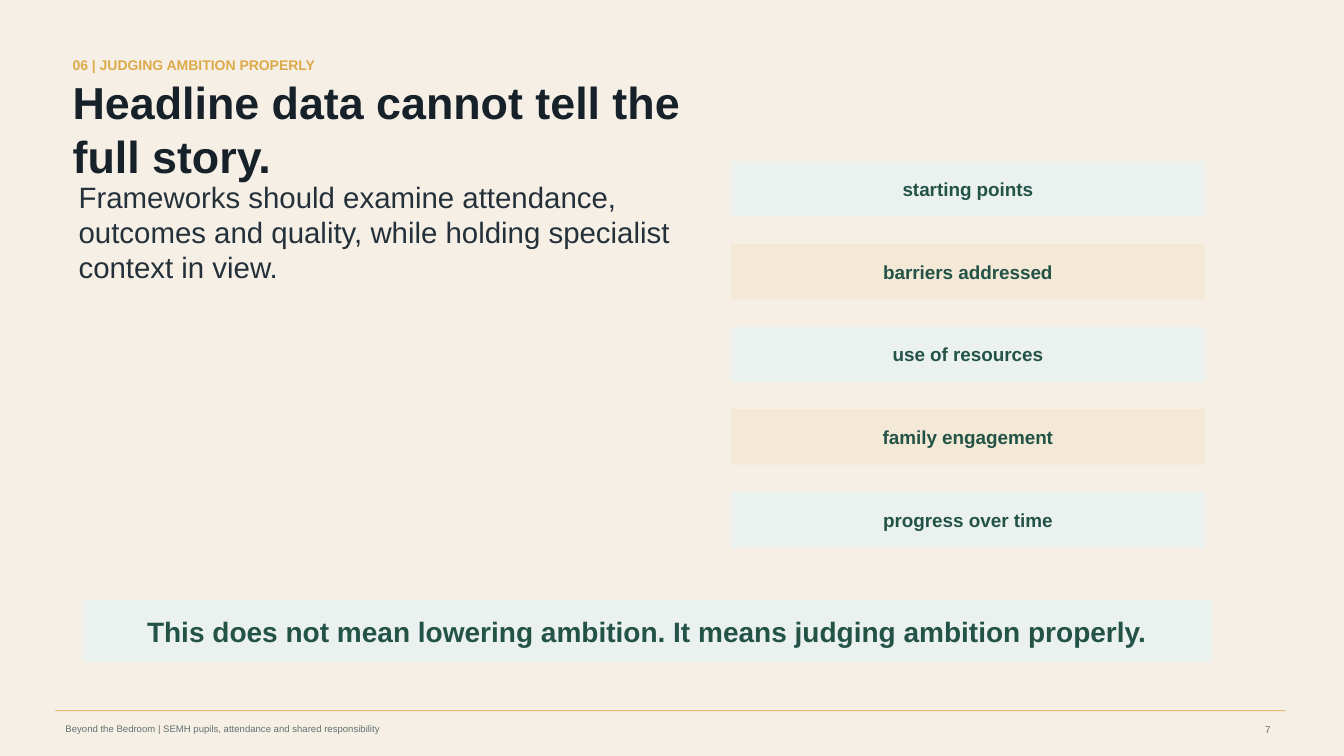
from lxml.etree import SubElement
from pptx import Presentation
from pptx.dml.color import RGBColor
from pptx.enum.shapes import MSO_CONNECTOR, MSO_SHAPE
from pptx.enum.text import MSO_ANCHOR, PP_ALIGN
from pptx.oxml.ns import qn
from pptx.util import Inches, Pt

COLOURS = {
    "cream": "F6EFE5", "gold": "DDAA4A", "ink": "16212A", "slate": "24313A",
    "grey": "61706F", "green": "235347", "mint": "EAF1EE", "sand": "F4E9D6",
}

# Content: text, (left, top, width, height), size, colour, bold
TEXTS = [
    ("Beyond the Bedroom | SEMH pupils, attendance and shared responsibility",
     (0.65, 7.13, 8, 0.2), 6.8, "grey", False),
    ("06 | JUDGING AMBITION PROPERLY", (0.72, 0.52, 5.5, 0.25), 10, "gold", True),
    ("Headline data cannot tell the full story.",
     (0.72, 0.85, 6.05, 0.85), 32, "ink", True),
    ("Frameworks should examine attendance, outcomes and quality, "
     "while holding specialist context in view.",
     (0.78, 1.8, 6.2, 1), 21, "slate", False),
]
FACTORS = ["starting points", "barriers addressed", "use of resources",
           "family engagement", "progress over time"]
FACTOR_FILLS = ["mint", "sand"]
FACTOR_TOP, FACTOR_STEP = 1.6, 0.82
MESSAGE = "This does not mean lowering ambition. It means judging ambition properly."
PAGE_NUMBER = "7"


def colour(name):
    return RGBColor.from_string(COLOURS[name])


def write(shape, text, size, ink, bold=False, align=PP_ALIGN.LEFT,
          anchor=MSO_ANCHOR.MIDDLE, inset=(0, 0)):
    frame = shape.text_frame
    across, down = map(Inches, inset)
    frame_format = {"word_wrap": True, "vertical_anchor": anchor,
                    "margin_left": across, "margin_right": across,
                    "margin_top": down, "margin_bottom": down}
    for name, value in frame_format.items():
        setattr(frame, name, value)
    para = frame.paragraphs[0]
    para.alignment = align
    span = para.add_run()
    span.text = text
    for name, value in {"name": "Arial", "size": Pt(size), "bold": bold}.items():
        setattr(span.font, name, value)
    span.font.color.rgb = colour(ink)


def add_text(page, text, place, size, ink, bold=False, **layout):
    box = page.shapes.add_textbox(*map(Inches, place))
    write(box, text, size, ink, bold, **layout)


def add_panel(page, text, place, size, fill):
    panel = page.shapes.add_shape(MSO_SHAPE.RECTANGLE, *map(Inches, place))
    panel.shadow.inherit = False
    panel.fill.solid()
    panel.fill.fore_color.rgb = colour(fill)
    panel.line.fill.background()
    write(panel, text, size, "green", True, PP_ALIGN.CENTER)


def add_footer_rule(page):
    rule = page.shapes.add_connector(
        MSO_CONNECTOR.STRAIGHT, *map(Inches, (0.55, 7.05, 12.75, 7.05)))
    rule.line.width = Pt(0.8)
    rule.line.color.rgb = colour("gold")
    properties = rule._element.spPr
    tint = properties.find(".//" + qn("a:srgbClr"))
    SubElement(tint, qn("a:alpha"), val="75000")
    SubElement(properties, qn("a:effectLst"))


def main():
    deck = Presentation()
    deck.slide_width, deck.slide_height = Inches(13.33), Inches(7.5)
    page = deck.slides.add_slide(deck.slide_layouts[6])
    page.background.fill.solid()
    page.background.fill.fore_color.rgb = colour("cream")

    # Footer rule, footer text and headings
    add_footer_rule(page)
    for entry in TEXTS:
        add_text(page, *entry)

    # Column of factors in alternating fills
    for index, factor in enumerate(FACTORS):
        place = (7.25, FACTOR_TOP + index * FACTOR_STEP, 4.7, 0.55)
        add_panel(page, factor, place, 13.5, FACTOR_FILLS[index % 2])

    # Closing message and page number
    add_panel(page, MESSAGE, (0.82, 5.95, 11.2, 0.62), 20, "mint")
    add_text(page, PAGE_NUMBER, (12.45, 7.13, 0.87, 0.33), 7, "grey",
             anchor=MSO_ANCHOR.TOP, inset=(0.1, 0.05))
    deck.save("out.pptx")


if __name__ == "__main__":
    main()
